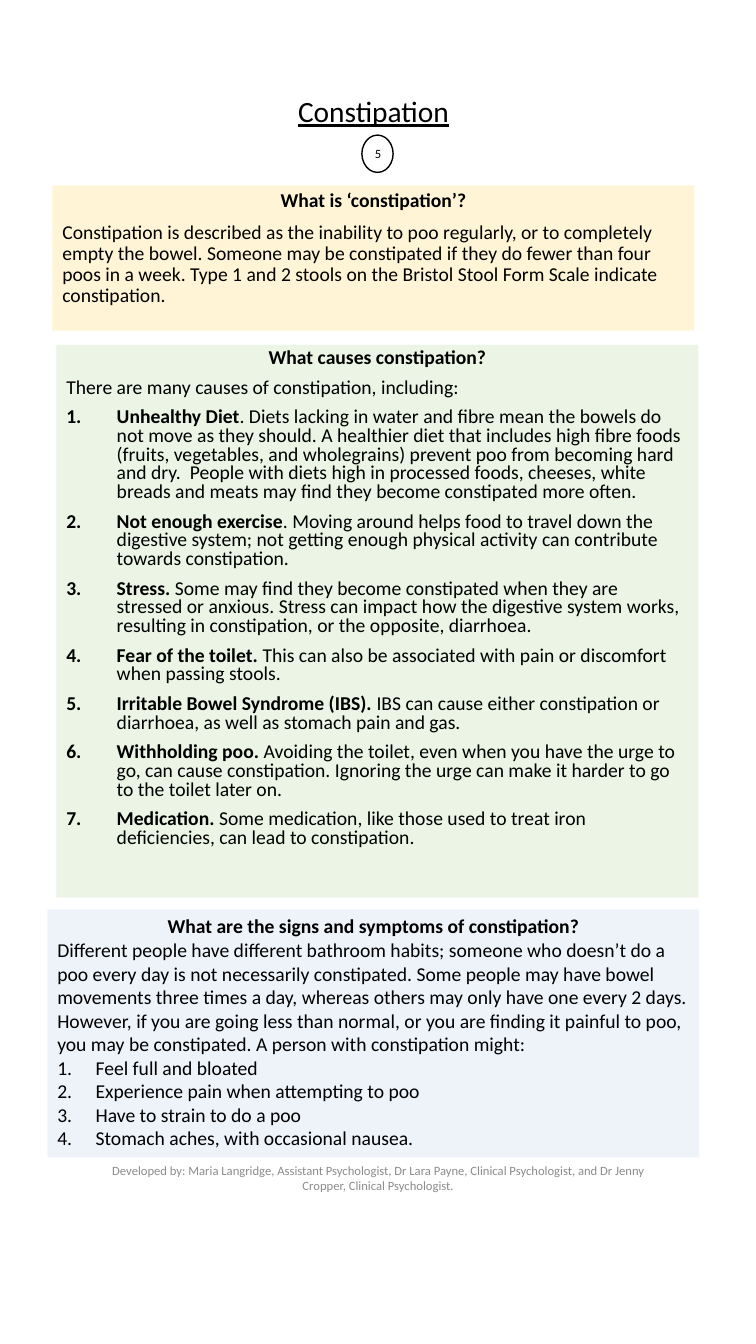
from lxml.etree import SubElement
from pptx import Presentation
from pptx.dml.color import RGBColor
from pptx.enum.shapes import MSO_SHAPE
from pptx.enum.text import MSO_ANCHOR, MSO_AUTO_SIZE, PP_ALIGN
from pptx.oxml.ns import qn
from pptx.util import Inches, Pt

FONT = "Calibri"
BLACK = "000000"

DEFINITION = (
    "Constipation is described as the inability to poo regularly, or to completely empty the bowel. "
    "Someone may be constipated if they do fewer than four poos in a week. "
    "Type 1 and 2 stools on the Bristol Stool Form Scale indicate constipation."
)
CAUSES = [
    ("Unhealthy Diet", ". Diets lacking in water and fibre mean the bowels do not move as they should. "
     "A healthier diet that includes high fibre foods (fruits, vegetables, and wholegrains) prevent poo "
     "from becoming hard and dry.  People with diets high in processed foods, cheeses, white breads and "
     "meats may find they become constipated more often."),
    ("Not enough exercise", ". Moving around helps food to travel down the digestive system; "
     "not getting enough physical activity can contribute towards constipation."),
    ("Stress. ", "Some may find they become constipated when they are stressed or anxious. "
     "Stress can impact how the digestive system works, resulting in constipation, or the opposite, diarrhoea."),
    ("Fear of the toilet. ", "This can also be associated with pain or discomfort when passing stools."),
    ("Irritable Bowel Syndrome (IBS). ", "IBS can cause either constipation or diarrhoea, "
     "as well as stomach pain and gas."),
    ("Withholding poo. ", "Avoiding the toilet, even when you have the urge to go, can cause constipation. "
     "Ignoring the urge can make it harder to go to the toilet later on."),
    ("Medication. ", "Some medication, like those used to treat iron deficiencies, can lead to constipation."),
]
SYMPTOMS_INTRO = (
    "Different people have different bathroom habits; someone who doesn’t do a poo every day is not "
    "necessarily constipated. Some people may have bowel movements three times a day, whereas others may "
    "only have one every 2 days. However, if you are going less than normal, or you are finding it painful "
    "to poo, you may be constipated. A person with constipation might:"
)
SYMPTOMS = [
    "Feel full and bloated",
    "Experience pain when attempting to poo",
    "Have to strain to do a poo",
    "Stomach aches, with occasional nausea.",
]
CREDIT = (
    "Developed by: Maria Langridge, Assistant Psychologist, Dr Lara Payne, Clinical Psychologist, "
    "and Dr Jenny Cropper, Clinical Psychologist."
)


def rgb(color):
    return RGBColor.from_string(color)


def add_run(paragraph, text, size=14, color=BLACK, bold=False):
    run = paragraph.add_run()
    run.text = text
    run.font.name = FONT
    run.font.size = Pt(size)
    run.font.bold = bold
    run.font.color.rgb = rgb(color)
    return run


def number_paragraph(paragraph, indent):
    properties = paragraph._p.get_or_add_pPr()
    properties.set("marL", str(Inches(indent)))
    properties.set("indent", str(-Inches(indent)))
    SubElement(properties, qn("a:buFont"), typeface="+mj-lt")
    SubElement(properties, qn("a:buAutoNum"), type="arabicPeriod")


def add_shape(slide, kind, box):
    shape = slide.shapes.add_shape(kind, *map(Inches, box))
    shape.shadow.inherit = False
    return shape


def add_panel(slide, box, color, opacity, heading, intro, items=(), indent=0, line_spacing=1.0, space_before=0):
    panel = add_shape(slide, MSO_SHAPE.RECTANGLE, box)
    panel.line.fill.background()
    panel.fill.solid()
    panel.fill.fore_color.rgb = rgb(color)
    color_element = panel._element.spPr.find(qn("a:solidFill"))[0]
    SubElement(color_element, qn("a:alpha"), val=str(opacity * 1000))

    frame = panel.text_frame
    frame.word_wrap = True
    frame.vertical_anchor = MSO_ANCHOR.TOP

    def add_paragraph(lead, rest="", alignment=PP_ALIGN.LEFT, numbered=False):
        paragraph = frame.add_paragraph() if frame.text else frame.paragraphs[0]
        paragraph.alignment = alignment
        paragraph.line_spacing = line_spacing
        paragraph.space_before = Pt(space_before)
        if numbered:
            number_paragraph(paragraph, indent)
        if lead:
            add_run(paragraph, lead, bold=True)
        if rest:
            add_run(paragraph, rest)

    add_paragraph(heading, alignment=PP_ALIGN.CENTER)
    add_paragraph("", intro)
    for lead, rest in items:
        add_paragraph(lead, rest, numbered=True)


def add_label(slide, box, text, alignment, color=BLACK):
    label = slide.shapes.add_textbox(*map(Inches, box))
    frame = label.text_frame
    frame.word_wrap = True
    frame.vertical_anchor = MSO_ANCHOR.MIDDLE
    frame.paragraphs[0].alignment = alignment
    add_run(frame.paragraphs[0], text, size=9, color=color)


def set_title(slide, box, text):
    title = slide.shapes.title
    title.left, title.top, title.width, title.height = map(Inches, box)
    frame = title.text_frame
    frame.auto_size = MSO_AUTO_SIZE.NONE
    frame.vertical_anchor = MSO_ANCHOR.MIDDLE
    paragraph = frame.paragraphs[0]
    paragraph.alignment = PP_ALIGN.CENTER
    paragraph.line_spacing = 0.9
    add_run(paragraph, text, size=21).font.underline = True


def add_ring(slide, box):
    ring = add_shape(slide, MSO_SHAPE.OVAL, box)
    ring.fill.background()
    ring.line.color.rgb = rgb(BLACK)
    ring.line.width = Pt(1)


def main():
    presentation = Presentation()
    presentation.slide_width = Inches(7.5)
    presentation.slide_height = Inches(13.33)
    slide = presentation.slides.add_slide(presentation.slide_layouts.get_by_name("Title Only"))

    set_title(slide, (0.47, -0.17, 6.47, 2.58), "Constipation")
    add_panel(slide, (0.52, 1.84, 6.37, 1.44), "FFE699", 40, "What is ‘constipation’?",
              DEFINITION, line_spacing=0.9, space_before=7.5)
    add_panel(slide, (0.56, 3.42, 6.37, 5.48), "C5E0B4", 34, "What causes constipation?",
              "There are many causes of constipation, including:", CAUSES,
              indent=0.5, line_spacing=0.8, space_before=7.5)
    add_panel(slide, (0.47, 9.02, 6.47, 2.46), "B4C7E7", 22,
              "What are the signs and symptoms of constipation?", SYMPTOMS_INTRO,
              [("", symptom) for symptom in SYMPTOMS], indent=0.38)
    add_label(slide, (3.52, 1.25, 0.36, 0.55), "5", PP_ALIGN.RIGHT)
    add_ring(slide, (3.59, 1.34, 0.31, 0.37))
    add_label(slide, (0.94, 11.33, 5.62, 0.71), CREDIT, PP_ALIGN.CENTER, "8C8C8C")

    presentation.save("out.pptx")


if __name__ == "__main__":
    main()
